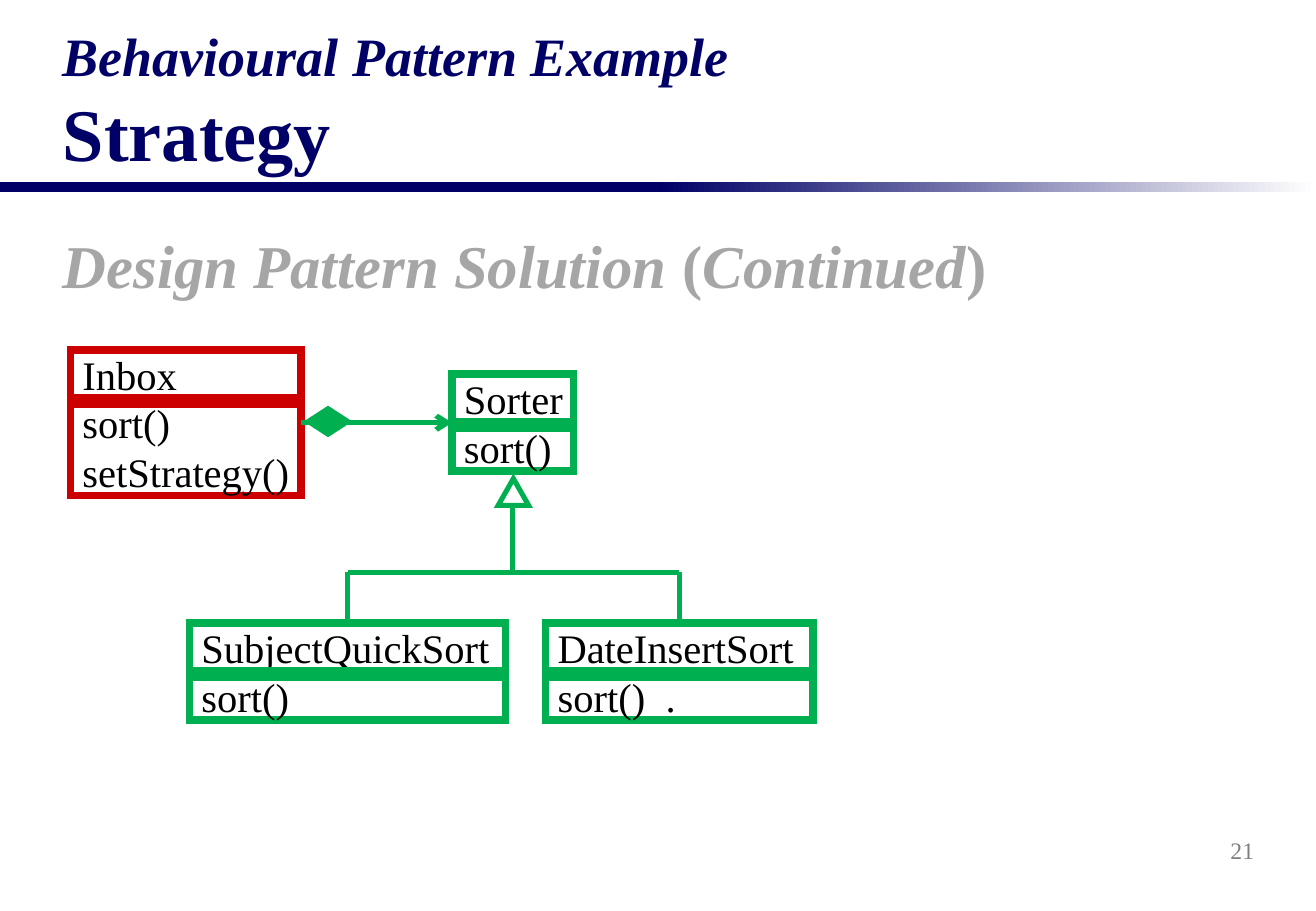
from lxml.etree import SubElement
from pptx import Presentation
from pptx.dml.color import RGBColor
from pptx.enum.shapes import MSO_CONNECTOR, MSO_SHAPE
from pptx.enum.text import MSO_ANCHOR, PP_ALIGN
from pptx.oxml.ns import qn
from pptx.util import Inches, Pt

COLORS = {"navy": "000066", "white": "FFFFFF", "heading": "A6A6A6", "number": "808080",
          "green": "00B050", "red": "CC0000", "black": "000000"}
RGB = {name: RGBColor.from_string(value) for name, value in COLORS.items()}

prs = Presentation()
prs.slide_width, prs.slide_height = Inches(10.83), Inches(7.5)
slide = prs.slides.add_slide(prs.slide_layouts[6])
shapes = slide.shapes


def add_run(paragraph, text, size, color, bold=False, italic=False):
    run = paragraph.add_run()
    run.text = text
    run.font.name, run.font.size = "Times New Roman", Pt(size)
    run.font.bold, run.font.italic = bold, italic
    run.font.color.rgb = RGB[color]


def add_line(x1, y1, x2, y2, color, width):
    line = shapes.add_connector(MSO_CONNECTOR.STRAIGHT, Inches(x1), Inches(y1), Inches(x2), Inches(y2))
    line.line.color.rgb = RGB[color]
    line.line.width = Pt(width)
    SubElement(line._element.spPr, qn("a:effectLst"))
    return line


# Rule under the title: solid half, then fading half
for left in (0, 5.41):
    rule = shapes.add_shape(MSO_SHAPE.RECTANGLE, Inches(left), Inches(1.5), Inches(5.42), Inches(0.08))
    rule.shadow.inherit = False
    rule.line.fill.background()
    if left == 0:
        rule.fill.solid()
        rule.fill.fore_color.rgb = RGB["navy"]
    else:
        rule.fill.gradient()
        rule.fill.gradient_angle = 0
        for stop, color, position in zip(rule.fill.gradient_stops, ("navy", "white"), (0, 1)):
            stop.color.rgb = RGB[color]
            stop.position = position

# Title
title = shapes.add_textbox(Inches(0.42), Inches(0.33), Inches(10), Inches(1.17)).text_frame
title.word_wrap = True
title.vertical_anchor = MSO_ANCHOR.BOTTOM
title_line = title.paragraphs[0]
add_run(title_line, "Behavioural Pattern Example", 32, "navy", bold=True, italic=True)
title_line.add_line_break()
add_run(title_line, "Strategy", 44, "navy", bold=True)

# Section heading with a hanging indent
heading = shapes.add_textbox(Inches(0.42), Inches(1.83), Inches(10), Inches(0.75)).text_frame
heading.word_wrap = True
heading_line = heading.paragraphs[0]
for text, italic in (("Design Pattern Solution ", True), ("(", False), ("Continued", True), (")", False)):
    add_run(heading_line, text, 36, "heading", bold=True, italic=italic)
heading_props = heading_line._p.get_or_add_pPr()
heading_props.set("marL", str(Inches(0.44)))
heading_props.set("indent", str(-Inches(0.44)))
SubElement(SubElement(heading_props, qn("a:spcBef")), qn("a:spcPct")).set("val", "20000")

# Slide number
number = shapes.add_textbox(Inches(8.16), Inches(6.75), Inches(2.26), Inches(0.5)).text_frame
number.word_wrap = False
number.vertical_anchor = MSO_ANCHOR.MIDDLE
number.paragraphs[0].alignment = PP_ALIGN.RIGHT
add_run(number.paragraphs[0], "21", 14, "number")

# Class boxes, each with a divider under the class name
classes = [
    ("Sorter", ["sort()"], 3.72, 3.08, 1, 0.8, "green"),
    ("SubjectQuickSort", ["sort()"], 1.56, 5.13, 2.6, 0.8, "green"),
    ("DateInsertSort", ["sort()  ."], 4.49, 5.13, 2.2, 0.8, "green"),
    ("Inbox", ["sort()", "setStrategy()"], 0.58, 2.88, 1.9, 1.2, "red"),
]
boxes = {}
for name, methods, left, top, width, height, color in classes:
    box = shapes.add_shape(MSO_SHAPE.RECTANGLE, Inches(left), Inches(top), Inches(width), Inches(height))
    box.shadow.inherit = False
    box.fill.background()
    box.line.color.rgb = RGB[color]
    box.line.width = Pt(4.5)
    SubElement(box.line._get_or_add_ln(), qn("a:miter")).set("lim", "800000")
    frame = box.text_frame
    frame.word_wrap = False
    frame.vertical_anchor = MSO_ANCHOR.MIDDLE
    for i, text in enumerate([name] + methods):
        paragraph = frame.add_paragraph() if i else frame.paragraphs[0]
        paragraph.alignment = PP_ALIGN.LEFT
        add_run(paragraph, text, 24, "black")
    add_line(left, top + 0.42, left + width, top + 0.42, color, 8)
    boxes[name] = box

# Inheritance tree: branches, crossbar, stem and hollow arrowhead
for name, x in (("SubjectQuickSort", 2.86), ("DateInsertSort", 5.59)):
    branch = add_line(x, 4.71, x, 5.13, "green", 3)
    branch.end_connect(boxes[name], 0)
add_line(2.86, 4.71, 5.59, 4.71, "green", 3)
add_line(4.22, 4.71, 4.22, 4.16, "green", 3)
arrowhead = shapes.add_shape(MSO_SHAPE.ISOSCELES_TRIANGLE, Inches(4.1), Inches(3.94), Inches(0.25), Inches(0.22))
arrowhead.shadow.inherit = False
arrowhead.fill.background()
arrowhead.line.color.rgb = RGB["green"]
arrowhead.line.width = Pt(3)
SubElement(arrowhead.line._get_or_add_ln(), qn("a:miter")).set("lim", "800000")

# Composition: Inbox holds a Sorter
composition = add_line(2.48, 3.48, 3.72, 3.48, "green", 3)
composition.begin_connect(boxes["Inbox"], 3)
composition.end_connect(boxes["Sorter"], 1)
SubElement(composition.line._get_or_add_ln(), qn("a:tailEnd")).set("type", "arrow")
outline = shapes.build_freeform(Inches(2.7), Inches(3.34))
outline.add_line_segments([(Inches(x), Inches(y)) for x, y in ((2.5, 3.47), (2.7, 3.6), (2.9, 3.47))], close=True)
diamond = outline.convert_to_shape()
diamond.shadow.inherit = False
diamond.fill.solid()
diamond.fill.fore_color.rgb = RGB["green"]
diamond.line.fill.background()

prs.save("out.pptx")
